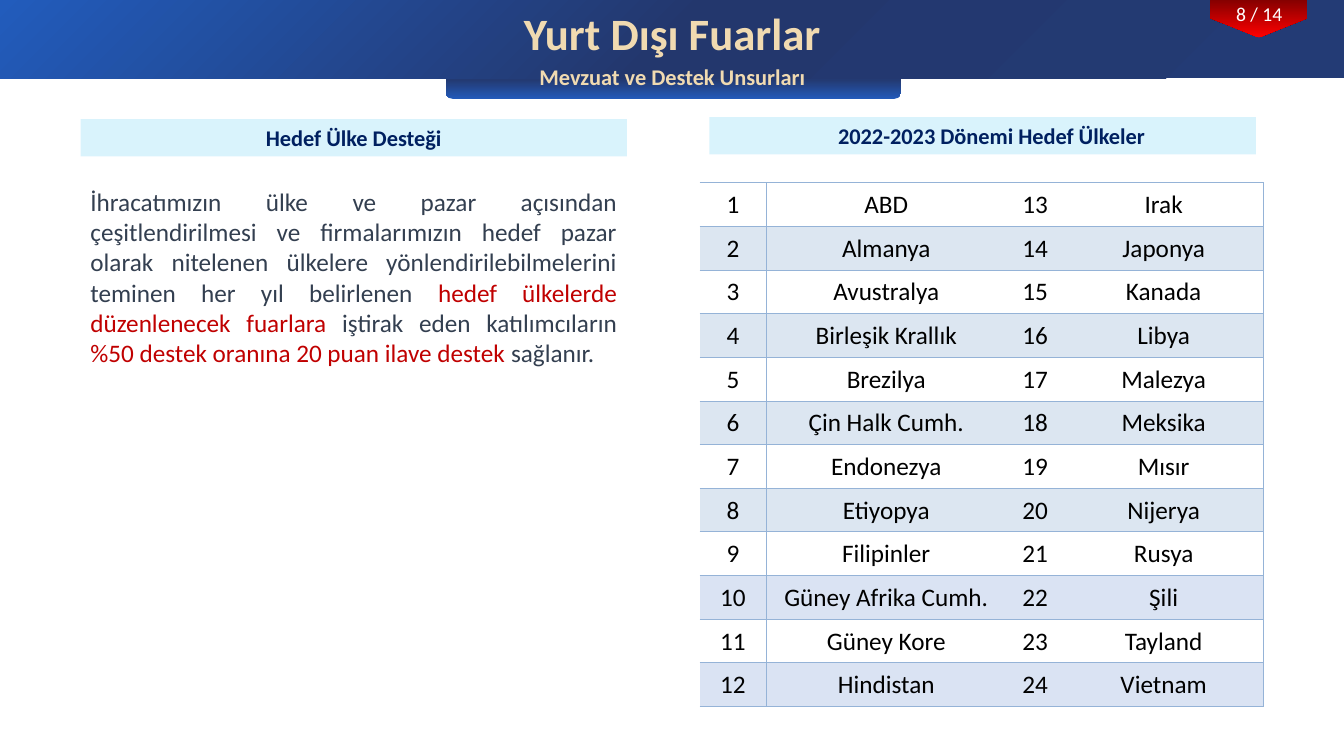
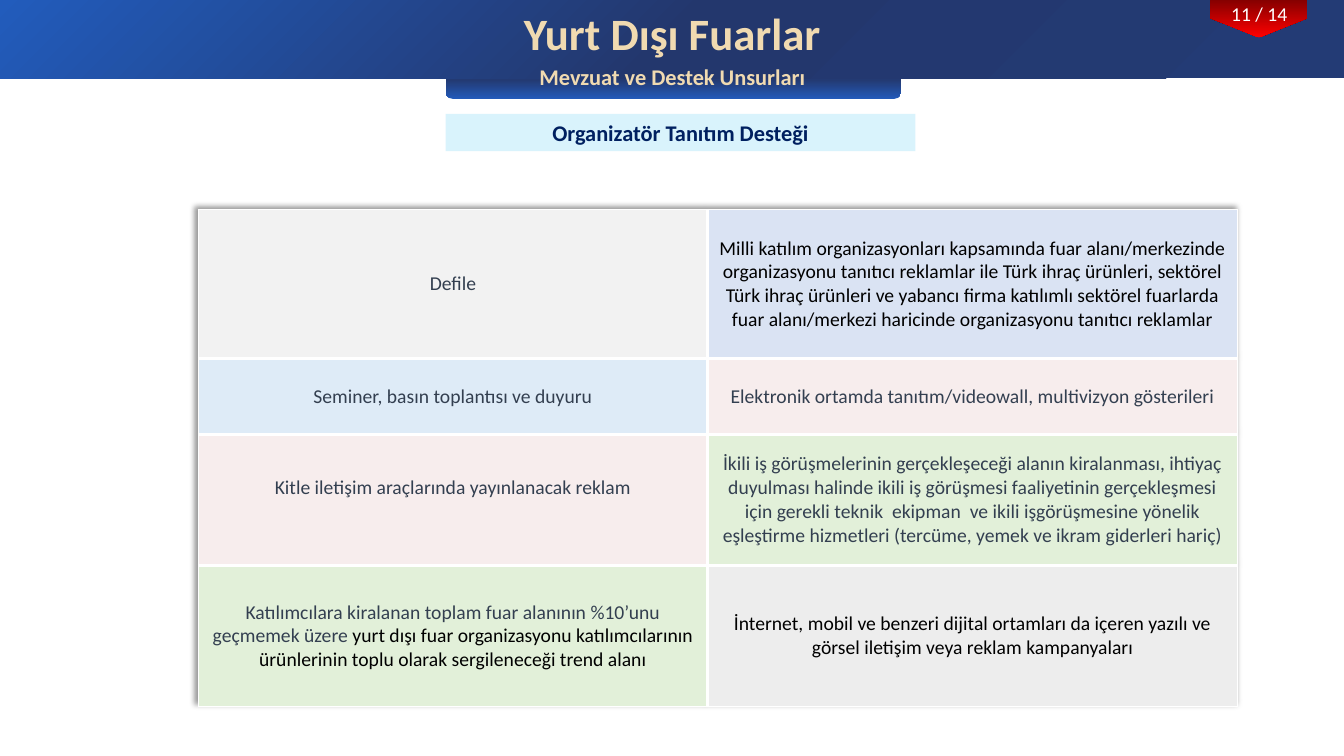
from pptx import Presentation
from pptx.dml.color import RGBColor as RGB
from pptx.enum.shapes import MSO_SHAPE as SHAPE
from pptx.enum.text import MSO_ANCHOR as ANCHOR, PP_ALIGN as ALIGN
from pptx.oxml import parse_xml
from pptx.oxml.ns import nsdecls
from pptx.util import Cm, Pt


class Theme:
    font = "Calibri"
    cream, navy, slate = "F0DAB1", "002060", "333F50"
    red, black, white = "C00000", "000000", "FFFFFF"
    label, rule = "00B0F0", "95B3D7"
    ice, periwinkle, sky = "DCE6F1", "DAE3F3", "DEEBF7"
    pearl, rose, green, gray = "F2F2F2", "F7EDED", "E2F0D9", "EDEDED"
    tab = [(0, "225AB9"), (45, "233A73")]
    band = [(0, "233B75"), (50, "23376D"), (100, "225CBC")]
    ribbon = [(0, "820000"), (100, "FF0000")]
    title = {"size": Pt(32), "bold": True}
    heading = {"size": Pt(16), "bold": True}
    body = {"size": Pt(18)}
    small = {"size": Pt(14)}


def write(tf, runs, style, align=ALIGN.CENTER):
    tf.word_wrap = True
    p = tf.paragraphs[0]
    p.alignment = align
    for text, color in runs:
        r = p.add_run()
        r.text = text
        for name, value in {"name": Theme.font, **style}.items():
            setattr(r.font, name, value)
        r.font.color.rgb = RGB.from_string(color)


def fill_cell(cell, fill, borders, color):
    tcPr = cell._tc.get_or_add_tcPr()
    for side, width in zip("LRTB", borders):
        paint = f'<a:solidFill><a:srgbClr val="{color}"/></a:solidFill>' if width else "<a:noFill/>"
        tcPr.append(parse_xml(
            f'<a:ln{side} {nsdecls("a")} w="{Pt(width)}">{paint}</a:ln{side}>'))
    if fill:
        cell.fill.solid()
        cell.fill.fore_color.rgb = RGB.from_string(fill)
    else:
        cell.fill.background()
    cell.vertical_anchor = ANCHOR.MIDDLE


prs = Presentation()
prs.slide_width, prs.slide_height = Cm(33.87), Cm(19.05)

header_shapes = [
    (SHAPE.ROUND_2_SAME_RECTANGLE, (11.23, 1.45, 11.48, 1.04), 180, Theme.tab, 90),
    (SHAPE.RECTANGLE, (0, 0, 33.87, 1.98), 0, Theme.band, 225),
    (SHAPE.PENTAGON, (31.24, -0.76, 0.97, 2.44), 90, Theme.ribbon, 0),
]
labels = {
    "8 / 14": [
        ("2022-2023 Dönemi Hedef Ülkeler", (17.88, 2.95, 13.77, 0.94), 0.7),
        ("Hedef Ülke Desteği", (2.03, 3, 13.77, 0.94), 0.25),
    ],
    "11 / 14": [
        ("Organizatör Tanıtım Desteği", (11.23, 2.87, 11.84, 0.94), 0.25),
    ],
}

slides = []
for page, page_labels in labels.items():
    s = prs.slides.add_slide(prs.slide_layouts[6])
    slides.append(s)
    for kind, box, rotation, stops, angle in header_shapes:
        sp = s.shapes.add_shape(kind, *map(Cm, box))
        sp.rotation = rotation
        sp.shadow.inherit = False
        sp.line.fill.background()
        stop_xml = "".join(
            f'<a:gs pos="{pos * 1000}"><a:srgbClr val="{color}"/></a:gs>' for pos, color in stops)
        sp._element.spPr.insert(2, parse_xml(
            f'<a:gradFill {nsdecls("a")} rotWithShape="1"><a:gsLst>{stop_xml}</a:gsLst>'
            f'<a:lin ang="{angle * 60000}" scaled="0"/></a:gradFill>'))
    for text, box, style, color in [
        (page, (30.25, -0.08, 2.97, 0.86), Theme.small, Theme.white),
        ("Yurt Dışı Fuarlar", (7.57, 0.03, 18.75, 1.63), Theme.title, Theme.cream),
        ("Mevzuat ve Destek Unsurları", (12.12, 1.47, 9.65, 0.94), Theme.heading, Theme.cream),
    ]:
        write(s.shapes.add_textbox(*map(Cm, box)).text_frame, [(text, color)], style)
    for text, box, indent in page_labels:
        sp = s.shapes.add_shape(SHAPE.RECTANGLE, *map(Cm, box))
        sp.shadow.inherit = False
        sp.line.fill.background()
        sp.fill.solid()
        sp.fill.fore_color.rgb = RGB.from_string(Theme.label)
        tint = sp._element.spPr.find(".//{*}srgbClr")
        tint.append(parse_xml(f'<a:alpha {nsdecls("a")} val="15000"/>'))
        sp.text_frame.margin_left = Cm(indent)
        write(sp.text_frame, [(text, Theme.navy)], Theme.heading)

target_slide, promotion_slide = slides

tb = target_slide.shapes.add_textbox(Cm(2.03), Cm(4.57), Cm(13.77), Cm(4.88))
write(tb.text_frame, [
    ("İhracatımızın ülke ve pazar açısından çeşitlendirilmesi ve firmalarımızın hedef pazar "
     "olarak nitelenen ülkelere yönlendirilebilmelerini teminen her yıl belirlenen ", Theme.slate),
    ("hedef ülkelerde düzenlenecek fuarlara ", Theme.red),
    ("iştirak eden katılımcıların ", Theme.slate),
    ("%50 destek oranına 20 puan ilave destek ", Theme.red),
    ("sağlanır.", Theme.slate),
], Theme.body, ALIGN.JUSTIFY)

countries = [
    "ABD", "Almanya", "Avustralya", "Birleşik Krallık", "Brezilya", "Çin Halk Cumh.",
    "Endonezya", "Etiyopya", "Filipinler", "Güney Afrika Cumh.", "Güney Kore", "Hindistan",
    "Irak", "Japonya", "Kanada", "Libya", "Malezya", "Meksika",
    "Mısır", "Nijerya", "Rusya", "Şili", "Tayland", "Vietnam",
]
half = len(countries) // 2
widths = [1.68, 6.05, 1.45, 5.03]
row_height = 1.1
column_borders = [(0, 0.5), (0.5, 0), (0, 0), (0, 0.5)]
tbl = target_slide.shapes.add_table(
    half, 4, Cm(17.63), Cm(4.6), Cm(sum(widths)), Cm(half * row_height)).table
for col, width in zip(tbl.columns, widths):
    col.width = Cm(width)
for i, row in enumerate(tbl.rows):
    row.height = Cm(row_height)
    fill = None
    if i % 2:
        fill = Theme.ice if i < 9 else Theme.periwinkle
    texts = [str(i + 1), countries[i], str(i + half + 1), countries[i + half]]
    for cell, text, sides in zip(row.cells, texts, column_borders):
        fill_cell(cell, fill, (*sides, 0.5, 0.5), Theme.rule)
        for name, value in {"left": 0.03, "right": 0.03, "top": 0.03, "bottom": 0}.items():
            setattr(cell, f"margin_{name}", Cm(value))
        write(cell.text_frame, [(text, Theme.black)], Theme.body)

activities = [
    (3.76, [
        (Theme.pearl, [("Defile", Theme.slate)]),
        (Theme.periwinkle, [
            ("Milli katılım organizasyonları kapsamında fuar alanı/merkezinde organizasyonu "
             "tanıtıcı reklamlar ile Türk ihraç ürünleri, sektörel Türk ihraç ürünleri ve "
             "yabancı firma katılımlı sektörel fuarlarda fuar alanı/merkezi haricinde "
             "organizasyonu tanıtıcı reklamlar", Theme.black)]),
    ]),
    (1.91, [
        (Theme.sky, [("Seminer, basın toplantısı ve duyuru", Theme.slate)]),
        (Theme.rose, [
            ("Elektronik ortamda tanıtım/videowall, multivizyon gösterileri", Theme.slate)]),
    ]),
    (3.3, [
        (Theme.rose, [("Kitle iletişim araçlarında yayınlanacak reklam", Theme.slate)]),
        (Theme.green, [
            ("İkili iş görüşmelerinin gerçekleşeceği alanın kiralanması, ihtiyaç duyulması "
             "halinde ikili iş görüşmesi faaliyetinin gerçekleşmesi için gerekli teknik  ekipman  "
             "ve ikili işgörüşmesine yönelik eşleştirme hizmetleri (tercüme, yemek ve ikram "
             "giderleri hariç)", Theme.slate)]),
    ]),
    (3.56, [
        (Theme.green, [
            ("Katılımcılara kiralanan toplam fuar alanının %10’unu geçmemek üzere ", Theme.slate),
            ("yurt dışı fuar organizasyonu katılımcılarının ürünlerinin toplu olarak "
             "sergileneceği trend alanı", Theme.black)]),
        (Theme.gray, [
            ("İnternet, mobil ve benzeri dijital ortamları da içeren yazılı ve görsel iletişim "
             "veya reklam kampanyaları", Theme.black)]),
    ]),
]
widths = [12.83, 13.36]
tbl = promotion_slide.shapes.add_table(
    len(activities), 2, Cm(5), Cm(5.28), Cm(sum(widths)),
    Cm(sum(height for height, _ in activities))).table
tbl._tbl.tblPr.insert(0, parse_xml(
    f'<a:effectLst {nsdecls("a")}><a:outerShdw blurRad="50800" dist="38100" dir="13500000" '
    f'algn="br" rotWithShape="0"><a:srgbClr val="{Theme.black}"><a:alpha val="40000"/>'
    '</a:srgbClr></a:outerShdw></a:effectLst>'))
for col, width in zip(tbl.columns, widths):
    col.width = Cm(width)
last = len(activities) - 1
for i, (row, (height, cells)) in enumerate(zip(tbl.rows, activities)):
    row.height = Cm(height)
    for j, (cell, (fill, runs)) in enumerate(zip(row.cells, cells)):
        outer = (j == 0, j == 1, i == 0, i == last)
        fill_cell(cell, fill, [1 if edge else 2.25 for edge in outer], Theme.white)
        write(cell.text_frame, runs, Theme.small)
tbl.cell(2, 0).margin_bottom = Cm(0.73)

prs.save("out.pptx")
